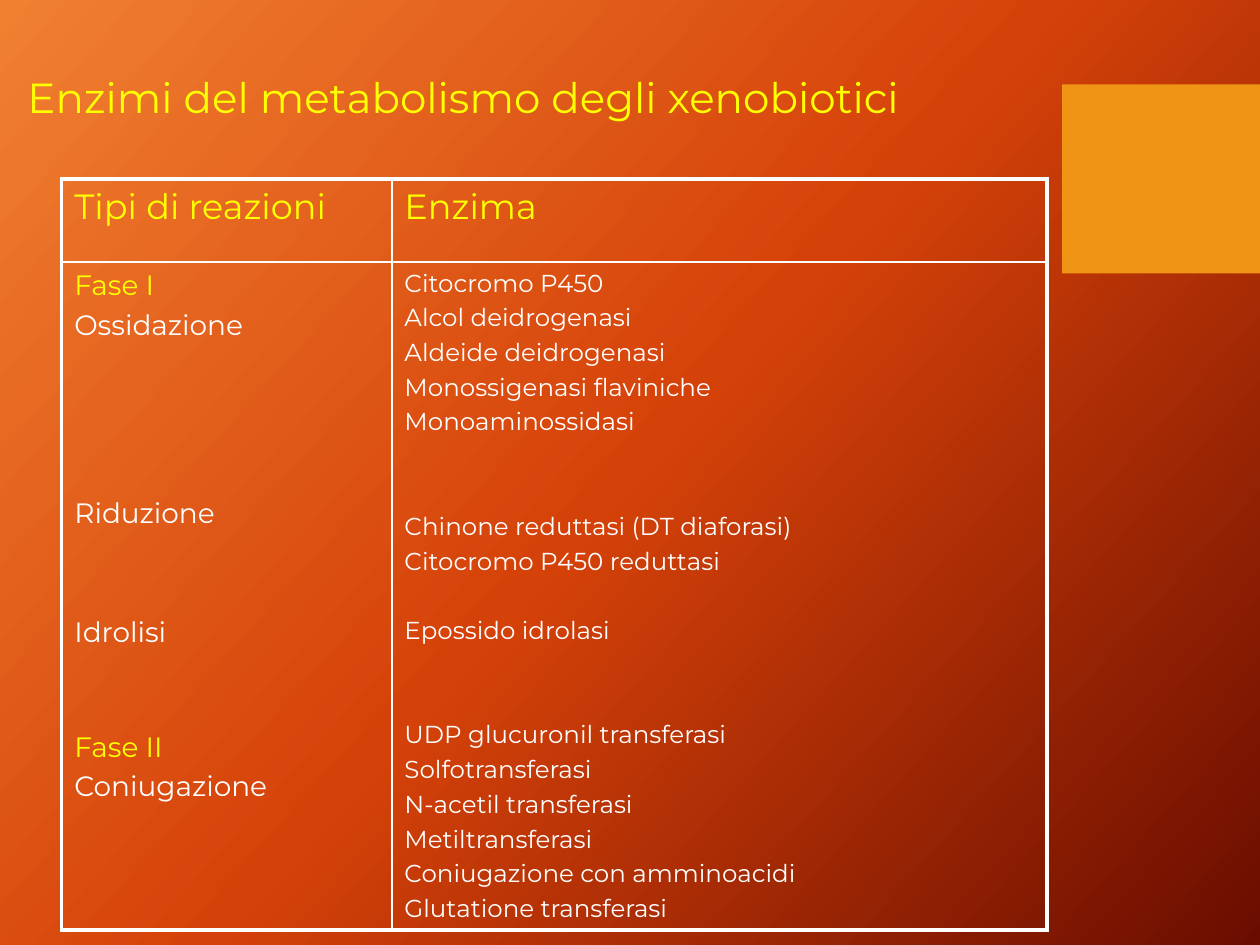
from copy import deepcopy

from pptx import Presentation
from pptx.dml.color import RGBColor
from pptx.enum.shapes import MSO_SHAPE
from pptx.enum.text import MSO_AUTO_SIZE
from pptx.oxml.ns import qn
from pptx.util import Inches, Pt
from lxml.etree import SubElement

YELLOW = RGBColor(0xFF, 0xFF, 0x00)
WHITE = RGBColor(0xFF, 0xFF, 0xFF)
AMBER = RGBColor(0xF0, 0x94, 0x15)
GRADIENT = [
    (0, RGBColor(0xF1, 0x80, 0x31)),
    (0.5, RGBColor(0xD5, 0x42, 0x09)),
    (1, RGBColor(0x6A, 0x0D, 0x00)),
]

GRID_COLS, GRID_ROWS = 100, 75
OUTER, INNER = 2.25, 1
LINE_PITCH = 1.42  # line height plus space before, in font sizes

TITLE = {"size": Pt(24), "color": YELLOW}
HEADER = {"size": Pt(20), "color": YELLOW}
PHASE = {"size": Pt(16), "color": YELLOW}
REACTION = {"size": Pt(16), "color": WHITE}
ENZYME = {"size": Pt(14), "color": WHITE}

# Each line: text, format, points of type left open above it
REACTIONS = [
    ("Fase I", PHASE, 0),
    ("Ossidazione", REACTION, 0),
    ("Riduzione", REACTION, 60),
    ("Idrolisi", REACTION, 32),
    ("Fase II", PHASE, 30),
    ("Coniugazione", REACTION, 0),
]
ENZYME_GROUPS = [
    (0, ["Citocromo P450", "Alcol deidrogenasi", "Aldeide deidrogenasi",
         "Monossigenasi flaviniche", "Monoaminossidasi"]),
    (28, ["Chinone reduttasi (DT diaforasi)", "Citocromo P450 reduttasi"]),
    (14, ["Epossido idrolasi"]),
    (28, ["UDP glucuronil transferasi", "Solfotransferasi",
          "N-acetil transferasi", "Metiltransferasi",
          "Coniugazione con amminoacidi", "Glutatione transferasi"]),
]
ENZYMES = [(name, ENZYME, 0 if i else gap)
           for gap, names in ENZYME_GROUPS for i, name in enumerate(names)]


class SlideBuilder:
    font = "Montserrat"

    def __init__(self, prs):
        self.slide = prs.slides.add_slide(prs.slide_layouts[6])
        self.col = prs.slide_width / GRID_COLS
        self.row = prs.slide_height / GRID_ROWS

    def box(self, x, y, w, h):
        """Turn grid columns and rows into slide lengths."""
        return (round(x * self.col), round(y * self.row),
                round(w * self.col), round(h * self.row))

    def background(self, stops, angle):
        fill = self.slide.background.fill
        fill.gradient()
        fill.gradient_angle = 360 - angle
        gs_list = self.slide.element.find(".//" + qn("a:gsLst"))
        while len(gs_list) < len(stops):
            gs_list.append(deepcopy(gs_list[0]))
        for stop, (position, color) in zip(fill.gradient_stops, stops):
            stop.position = position
            stop.color.rgb = color

    def rectangle(self, color, *area):
        sp = self.slide.shapes.add_shape(MSO_SHAPE.RECTANGLE, *self.box(*area))
        sp.shadow.inherit = False
        sp.fill.solid()
        sp.fill.fore_color.rgb = color
        sp.line.fill.background()

    def add_lines(self, tf, lines):
        for i, (text, style, gap) in enumerate(lines):
            p = tf.add_paragraph() if i else tf.paragraphs[0]
            if i:
                p.space_before = Pt(round(0.2 * style["size"].pt + LINE_PITCH * gap, 1))
            r = p.add_run()
            r.text = text
            for name, value in {"name": self.font, **style}.items():
                if name == "color":
                    r.font.color.rgb = value
                else:
                    setattr(r.font, name, value)

    def text(self, text, style, *area):
        tf = self.slide.shapes.add_textbox(*self.box(*area)).text_frame
        tf.word_wrap = False
        tf.auto_size = MSO_AUTO_SIZE.SHAPE_TO_FIT_TEXT
        self.add_lines(tf, [(text, style, 0)])

    def border(self, cell, side, width):
        ln = SubElement(cell._tc.get_or_add_tcPr(), qn("a:" + side), w=str(Pt(width)))
        fill = SubElement(ln, qn("a:solidFill"))
        SubElement(fill, qn("a:srgbClr"), val=str(WHITE))

    def table(self, cells, x, y, widths, heights):
        """Draw a table with thick outer and thin inner rules."""
        area = self.box(x, y, sum(widths), sum(heights))
        table = self.slide.shapes.add_table(len(heights), len(widths), *area).table
        table.first_row = table.horz_banding = False
        for column, width in zip(table.columns, widths):
            column.width = round(width * self.col)
        for row, height in zip(table.rows, heights):
            row.height = round(height * self.row)
        last_row, last_col = len(heights) - 1, len(widths) - 1
        for i, row in enumerate(cells):
            for j, lines in enumerate(row):
                cell = table.cell(i, j)
                edges = {"lnL": j == 0, "lnR": j == last_col,
                         "lnT": i == 0, "lnB": i == last_row}
                for side, outer in edges.items():
                    self.border(cell, side, OUTER if outer else INNER)
                cell.fill.background()
                self.add_lines(cell.text_frame, lines)


def main():
    prs = Presentation()
    prs.slide_width, prs.slide_height = Inches(10), Inches(7.5)
    s = SlideBuilder(prs)
    s.background(GRADIENT, 42)
    s.rectangle(AMBER, 84.3, 6.7, 15.7, 15)
    headers = [[(text, HEADER, 0)] for text in ("Tipi di reazioni", "Enzima")]
    s.table([headers, [REACTIONS, ENZYMES]], 4.9, 14.2, (26.2, 52), (6.6, 53))
    s.text("Enzimi del metabolismo degli xenobiotici", TITLE, 1.2, 5.2, 77.7, 5)
    prs.save("out.pptx")


if __name__ == "__main__":
    main()
